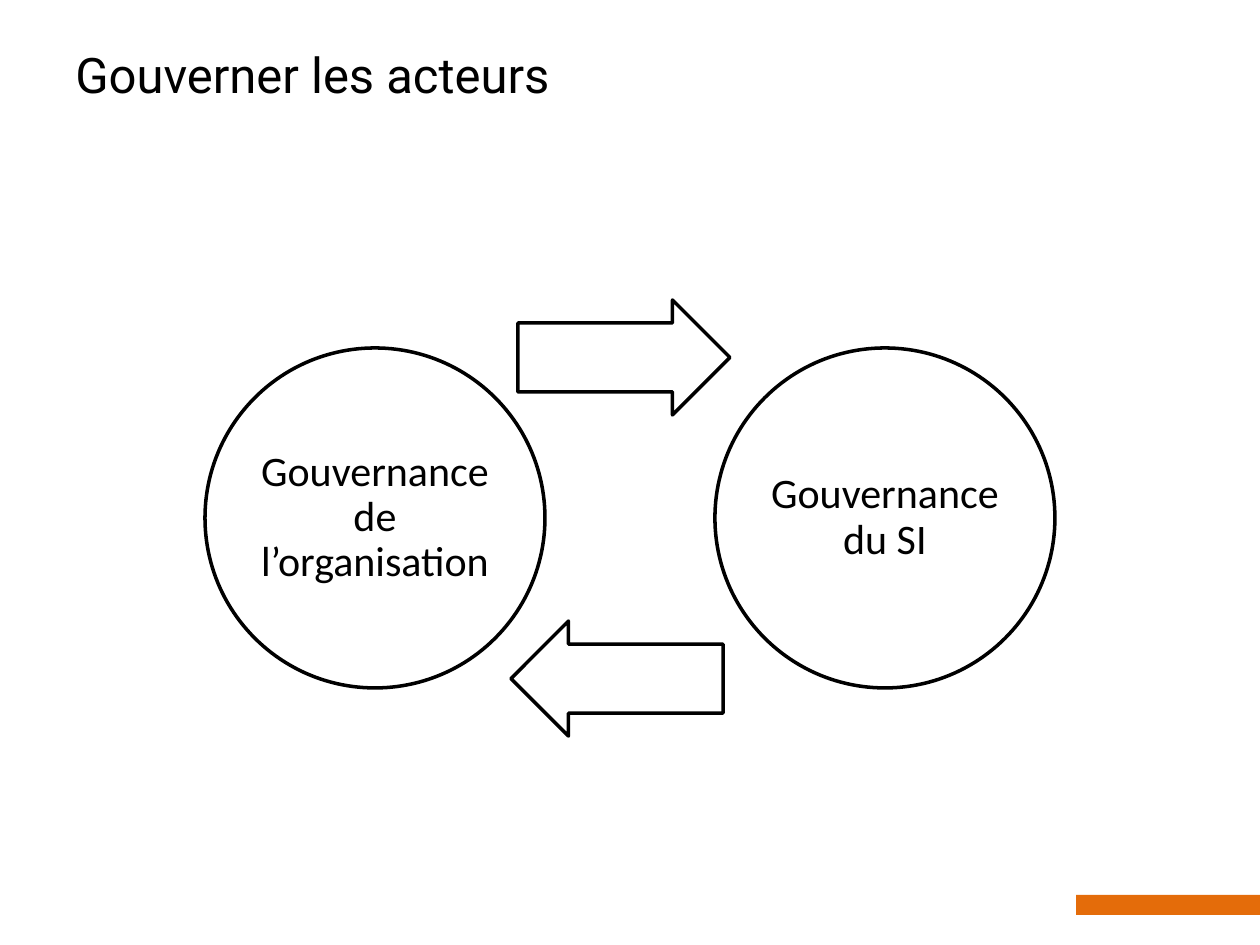
from pptx import Presentation
from pptx import util as u
from pptx.dml.color import RGBColor
from pptx.enum import shapes, text

COLORS = {"ink": "000000", "accent": "E46C0A"}
SHAPE = shapes.MSO_SHAPE
DIAMETER, CIRCLE_TOP = 340, 348
ARROW_W, ARROW_H = 212, 115


def px(n):
    return u.Emu(round(n * 914400 / 126))


def rgb(name):
    return RGBColor.from_string(COLORS[name])


def add_text(sp, content, font="Calibri", size=24, align=text.PP_ALIGN.CENTER,
             anchor=text.MSO_ANCHOR.MIDDLE, spacing=None, margin=None):
    tf = sp.text_frame
    tf.word_wrap = True
    tf.vertical_anchor = anchor
    if margin is not None:
        tf.margin_left = tf.margin_right = px(margin)
        tf.margin_top = tf.margin_bottom = px(margin)
    p = tf.paragraphs[0]
    p.alignment = align
    p.line_spacing = spacing
    r = p.add_run()
    r.text = content
    r.font.name = font
    r.font.size = u.Pt(size)
    r.font.color.rgb = rgb("ink")


def add_shape(s, kind, x, y, w, h, fill=None, line=None):
    sp = s.shapes.add_shape(kind, px(x), px(y), px(w), px(h))
    sp.shadow.inherit = False
    if fill:
        sp.fill.solid()
        sp.fill.fore_color.rgb = rgb(fill)
    else:
        sp.fill.background()
    if line:
        sp.line.color.rgb = rgb(line)
        sp.line.width = u.Pt(2)
    else:
        sp.line.fill.background()
    return sp


def add_title(s, content):
    sp = s.shapes.add_textbox(px(63), px(38), px(1134), px(157))
    add_text(sp, content, font="Roboto", size=28,
             align=text.PP_ALIGN.LEFT, anchor=text.MSO_ANCHOR.TOP)


def add_circle(s, x, label):
    sp = add_shape(s, SHAPE.OVAL, x, CIRCLE_TOP, DIAMETER, DIAMETER, line="ink")
    add_text(sp, label, spacing=0.9, margin=4)


def add_arrow(s, x, y, rotation=0):
    sp = add_shape(s, SHAPE.RIGHT_ARROW, x, y, ARROW_W, ARROW_H, line="ink")
    sp.adjustments[0] = 0.6
    sp.adjustments[1] = 0.5
    sp.rotation = rotation


def main():
    prs = Presentation()
    prs.slide_width, prs.slide_height = px(1260), px(945)
    s = prs.slides.add_slide(prs.slide_layouts[6])
    add_shape(s, SHAPE.RECTANGLE, 1076, 895, 184, 20, fill="accent")
    add_title(s, "Gouverner les acteurs")
    add_circle(s, 205, "Gouvernance de l’organisation")
    add_arrow(s, 518, 300)
    add_circle(s, 715, "Gouvernance du SI")
    add_arrow(s, 511, 621, rotation=180)
    prs.save("out.pptx")


if __name__ == "__main__":
    main()
